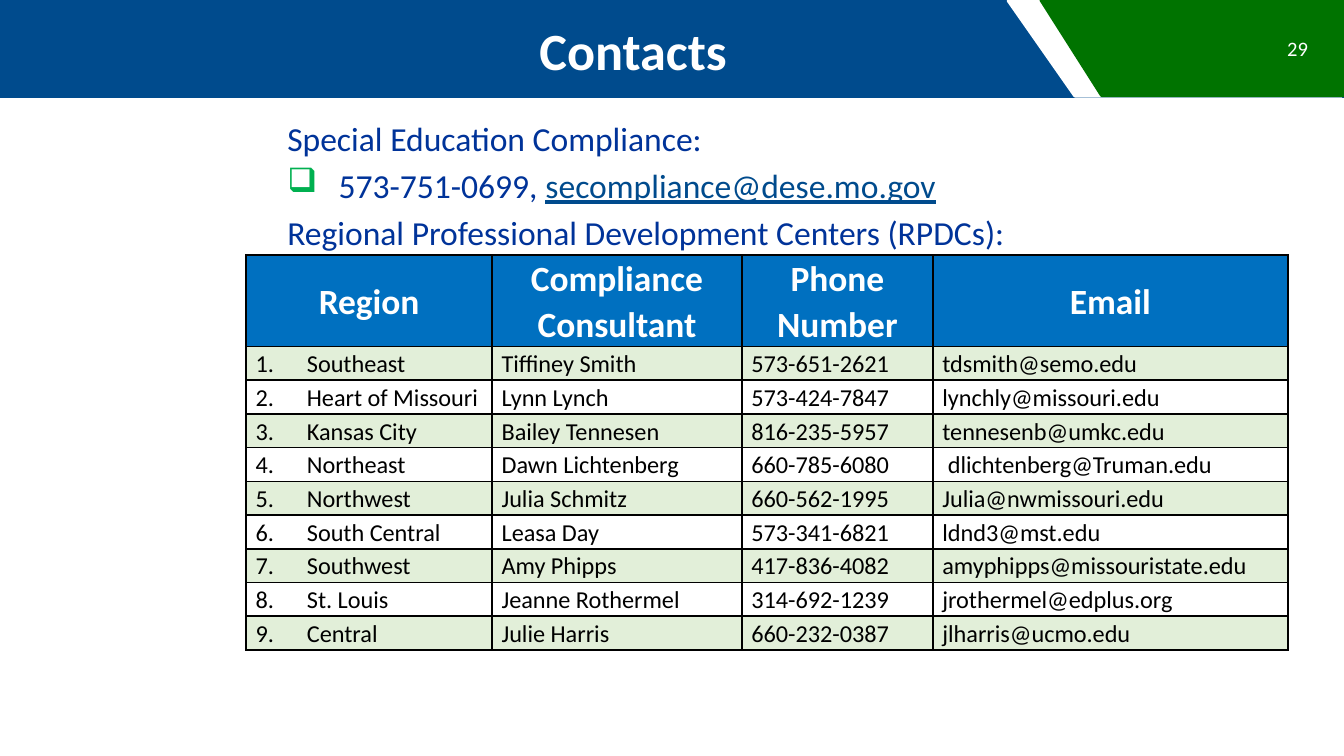
"""Build the Contacts slide with its table of regional compliance consultants."""
import pptx
import pptx.dml.color
import pptx.enum.shapes
import pptx.enum.text
import pptx.oxml
import pptx.oxml.ns
import pptx.util

Cm, Pt = pptx.util.Cm, pptx.util.Pt
ALIGN, ANCHOR = pptx.enum.text.PP_ALIGN, pptx.enum.text.MSO_ANCHOR
SHAPE = pptx.enum.shapes.MSO_SHAPE
NS = pptx.oxml.ns.nsdecls("a")
THEME = {
    "font": "Calibri",
    "colors": {
        "navy": "004B8D", "green": "007300", "white": "FFFFFF", "black": "000000",
        "text": "003399", "bullet": "00B050", "header": "0070C0", "band": "E2EFD9",
    },
    "sizes": {"title": 28, "number": 11, "body": 18, "header": 19, "cell": 13},
}


def color(name):
    return pptx.dml.color.RGBColor.from_string(THEME["colors"][name])


def add_run(p, text, size, ink, **formats):
    r = p.add_run()
    r.text = text
    values = {"name": THEME["font"], "size": Pt(THEME["sizes"][size]), **formats}
    for name, value in values.items():
        setattr(r.font, name, value)
    r.font.color.rgb = color(ink)


prs = pptx.Presentation()
prs.slide_width, prs.slide_height = Cm(25.4), Cm(14.29)
s = prs.slides.add_slide(prs.slide_layouts[6])

banner = [
    (SHAPE.RECTANGLE, 0, 0, 25.4, 1.85, 0, "navy"),
    (SHAPE.FLOWCHART_MANUAL_INPUT, 21.31, -2.24, 1.8, 6.3, 270, "white"),
    (SHAPE.FLOWCHART_MANUAL_INPUT, 21.64, -1.96, 1.8, 5.72, 270, "green"),
]
for kind, left, top, width, height, rotation, fill in banner:
    sp = s.shapes.add_shape(kind, Cm(left), Cm(top), Cm(width), Cm(height))
    sp.rotation = rotation
    sp.shadow.inherit = False
    sp.fill.solid()
    sp.fill.fore_color.rgb = color(fill)
    if rotation:
        sp.line.color.rgb = color(fill)
        sp.line.width = Pt(2)
    else:
        sp.line.fill.background()

labels = [
    ("Contacts", 5.08, 0.2, 13.77, 1.47, "title", ALIGN.CENTER, True),
    ("29", 22.86, 0.53, 2.11, 0.76, "number", ALIGN.RIGHT, False),
]
for text, left, top, width, height, size, align, bold in labels:
    tf = s.shapes.add_textbox(Cm(left), Cm(top), Cm(width), Cm(height)).text_frame
    tf.word_wrap = True
    tf.vertical_anchor = ANCHOR.MIDDLE
    p = tf.paragraphs[0]
    p.alignment = align
    add_run(p, text, size, "white", bold=bold)

tf = s.shapes.add_textbox(Cm(4.88), Cm(2.1), Cm(19.69), Cm(2.7)).text_frame
tf.word_wrap = True
lines = [
    ("Special Education Compliance:", "", False),
    ("573-751-0699, ", "secompliance@dese.mo.gov", True),
    ("Regional Professional Development Centers (RPDCs):", "", False),
]
for i, (text, address, bulleted) in enumerate(lines):
    p = tf.add_paragraph() if i else tf.paragraphs[0]
    pPr = p._p.get_or_add_pPr()
    pPr.set("marL", str(Cm(1.27 if bulleted else 0.3)))
    pPr.set("indent", str(Cm(-0.97 if bulleted else 0)))
    if i:
        p.space_before = Pt(3.6)
    if bulleted:
        bullet = THEME["colors"]["bullet"]
        pPr.append(pptx.oxml.parse_xml(f'<a:buClr {NS}><a:srgbClr val="{bullet}"/></a:buClr>'))
        pPr.append(pptx.oxml.parse_xml(f'<a:buChar {NS} char="❑"/>'))
    add_run(p, text, "body", "text")
    if address:
        add_run(p, address, "body", "navy", underline=True)

rows = [
    ("Region", "Compliance Consultant", "Phone Number", "Email"),
    ("Southeast", "Tiffiney Smith", "573-651-2621", "tdsmith@semo.edu"),
    ("Heart of Missouri", "Lynn Lynch", "573-424-7847", "lynchly@missouri.edu"),
    ("Kansas City", "Bailey Tennesen", "816-235-5957", "tennesenb@umkc.edu"),
    ("Northeast", "Dawn Lichtenberg", "660-785-6080", " dlichtenberg@Truman.edu"),
    ("Northwest", "Julia Schmitz", "660-562-1995", "Julia@nwmissouri.edu"),
    ("South Central", "Leasa Day", "573-341-6821", "ldnd3@mst.edu"),
    ("Southwest", "Amy Phipps", "417-836-4082", "amyphipps@missouristate.edu"),
    ("St. Louis", "Jeanne Rothermel", "314-692-1239", "jrothermel@edplus.org"),
    ("Central", "Julie Harris", "660-232-0387", "jlharris@ucmo.edu"),
]
table = s.shapes.add_table(len(rows), 4, Cm(4.65), Cm(4.82), Cm(19.69), Cm(7.46)).table
table.first_row = table.horz_banding = False
for column, width in zip(table.columns, (4.65, 4.72, 3.61, 6.71)):
    column.width = Cm(width)

cell_format = {
    "margin_left": Cm(0.18), "margin_right": Cm(0.18), "margin_top": 0,
    "margin_bottom": 0, "vertical_anchor": ANCHOR.MIDDLE,
}
for i, row in enumerate(rows):
    table.rows[i].height = Cm(0.637 if i else 1.73)
    for j, text in enumerate(row):
        cell = table.cell(i, j)
        for name, value in cell_format.items():
            setattr(cell, name, value)
        tcPr = cell._tc.get_or_add_tcPr()
        for side in ("lnL", "lnR", "lnT", "lnB"):
            tcPr.append(pptx.oxml.parse_xml(
                f'<a:{side} {NS} w="{Pt(1)}"><a:solidFill>'
                f'<a:srgbClr val="{THEME["colors"]["black"]}"/></a:solidFill></a:{side}>'))
        cell.fill.solid()
        cell.fill.fore_color.rgb = color("header" if i == 0 else "band" if i % 2 else "white")
        p = cell.text_frame.paragraphs[0]
        p.line_spacing = 1.07
        p.alignment = ALIGN.LEFT if i else ALIGN.CENTER
        if i and j == 0:
            p.alignment = ALIGN.JUSTIFY
            pPr = p._p.get_or_add_pPr()
            pPr.set("marL", str(Cm(0.97)))
            pPr.set("indent", str(Cm(-0.97)))
            pPr.append(pptx.oxml.parse_xml(
                f'<a:buAutoNum {NS} type="arabicPeriod" startAt="{i}"/>'))
        if i:
            add_run(p, text, "cell", "black", bold=False)
        else:
            add_run(p, text, "header", "white", bold=True)

prs.save("out.pptx")
